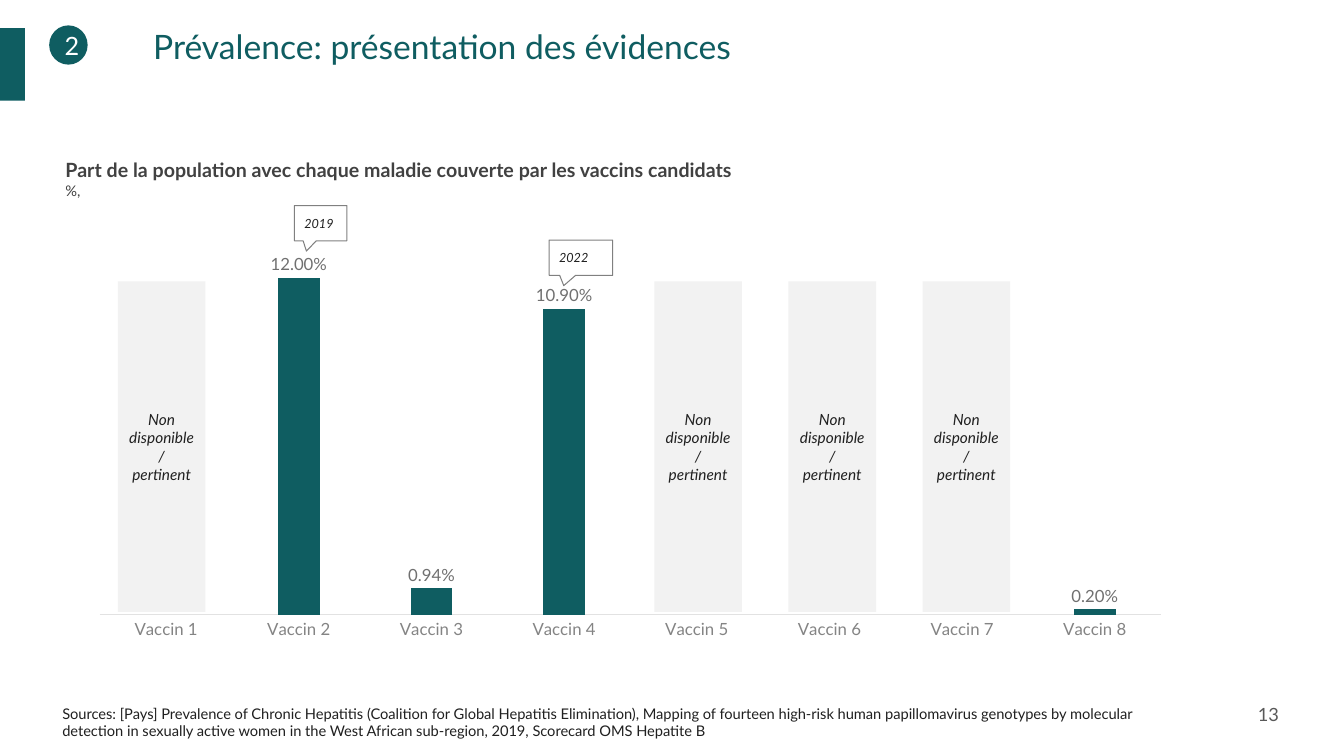
from collections import namedtuple

from lxml.etree import SubElement
from pptx import Presentation
from pptx.chart.data import CategoryChartData
from pptx.dml.color import RGBColor
from pptx.enum.chart import XL_CHART_TYPE as ChartType
from pptx.enum.chart import XL_LABEL_POSITION as LabelPosition
from pptx.enum.chart import XL_TICK_MARK as TickMark
from pptx.enum.shapes import MSO_SHAPE as Shape
from pptx.enum.text import MSO_ANCHOR as Anchor
from pptx.enum.text import MSO_AUTO_SIZE as AutoSize
from pptx.enum.text import PP_ALIGN as Align
from pptx.oxml.ns import qn
from pptx.util import Cm, Pt

TEAL = RGBColor(0x0F, 0x5D, 0x61)
WHITE = RGBColor(0xFF, 0xFF, 0xFF)
INK = RGBColor(0x20, 0x20, 0x20)
HEADING = RGBColor(0x41, 0x41, 0x41)
PAGE_GREY = RGBColor(0x59, 0x59, 0x59)
LABEL_GREY = RGBColor(0x70, 0x70, 0x70)
AXIS_GREY = RGBColor(0x84, 0x84, 0x84)
AXIS_LINE = RGBColor(0xE2, 0xE2, 0xE2)
OUTLINE = RGBColor(0x80, 0x80, 0x80)
CARD_GREY = RGBColor(0xF2, 0xF2, 0xF2)

FONT = "Lato"
Box = namedtuple("Box", "left top width height")
PREVALENCE = [None, 0.12, 0.0094, 0.109, None, None, None, 0.002]
PLOT_LAYOUT = {"x": 0.02, "y": 0.02, "w": 0.96, "h": 0.9}
SOURCES = (
    "Sources: [Pays] Prevalence of Chronic Hepatitis (Coalition for Global "
    "Hepatitis Elimination), Mapping of fourteen high-risk human papillomavirus "
    "genotypes by molecular detection in sexually active women in the West "
    "African sub-region, 2019, Scorecard OMS Hepatite B"
)


def style_font(font, size, color, bold=False, italic=False):
    """Apply the slide's typeface with a size, colour and emphasis."""
    font.name, font.size = FONT, Pt(size)
    font.color.rgb = color
    font.bold, font.italic = bold, italic


def add_run(paragraph, text, size, color, align=Align.LEFT, **emphasis):
    """Add one styled run to an aligned paragraph."""
    paragraph.alignment = align
    run = paragraph.add_run()
    run.text = text
    style_font(run.font, size, color, **emphasis)


def add_text(slide, box, anchor=Anchor.TOP):
    """Add a wrapping text box and return its frame."""
    frame = slide.shapes.add_textbox(*map(Cm, box)).text_frame
    frame.word_wrap = True
    frame.vertical_anchor = anchor
    return frame


def add_block(slide, kind, box, fill=None, line=None):
    """Add a flat preset shape with middle-anchored text."""
    block = slide.shapes.add_shape(kind, *map(Cm, box))
    block.shadow.inherit = False
    if fill is None:
        block.fill.background()
    else:
        block.fill.solid()
        block.fill.fore_color.rgb = fill
    if line is None:
        block.line.fill.background()
    else:
        block.line.color.rgb = line
        block.line.width = Pt(0.75)
    block.text_frame.vertical_anchor = Anchor.MIDDLE
    return block


def add_header(slide, box):
    """Place the title, its number badge and the edge marker."""
    add_block(slide, Shape.RECTANGLE, Box(-0.03, box.top + 0.07, 0.66, 1.83), TEAL)
    title = slide.shapes.title
    title.left, title.top, title.width, title.height = map(Cm, box)
    frame = title.text_frame
    frame.auto_size, frame.word_wrap = AutoSize.NONE, True
    frame.vertical_anchor = Anchor.TOP
    frame.margin_left = Cm(2.54)
    frame.margin_top = frame.margin_right = frame.margin_bottom = 0
    add_run(frame.paragraphs[0], "Prévalence: présentation des évidences", 24, TEAL)
    badge_box = Box(box.left - 0.08, box.top, 0.97, 0.99)
    badge = add_block(slide, Shape.OVAL, badge_box, TEAL)
    add_run(badge.text_frame.paragraphs[0], "2", 18, WHITE, Align.CENTER)


def add_chart_heading(slide, box):
    """Place the chart heading and its unit."""
    frame = add_text(slide, box)
    heading = "Part de la population avec chaque maladie couverte par les vaccins candidats"
    add_run(frame.paragraphs[0], heading, 14, HEADING, bold=True)
    add_run(frame.add_paragraph(), "%,", 10.5, HEADING)


def set_plot_layout(chart):
    """Fix the inner plot area as fractions of the chart."""
    plot_area = chart.element.xpath("c:chart/c:plotArea")[0]
    for automatic in plot_area.findall(qn("c:layout")):
        plot_area.remove(automatic)
    layout = SubElement(plot_area, qn("c:layout"))
    plot_area.insert(0, layout)
    manual = SubElement(layout, qn("c:manualLayout"))
    settings = {"layoutTarget": "inner", "xMode": "edge", "yMode": "edge", **PLOT_LAYOUT}
    for tag, value in settings.items():
        SubElement(manual, qn(f"c:{tag}")).set("val", str(value))


def add_prevalence_chart(slide, box):
    """Place the column chart of prevalence by vaccine."""
    data = CategoryChartData(number_format="0.00%")
    data.categories = [f"Vaccin {number}" for number in range(1, len(PREVALENCE) + 1)]
    data.add_series("Series 1", PREVALENCE)
    chart = slide.shapes.add_chart(ChartType.COLUMN_CLUSTERED, *map(Cm, box), data).chart
    chart.has_legend = chart.has_title = False
    style_font(chart.font, 12, HEADING)
    set_plot_layout(chart)

    vaccines = chart.category_axis
    vaccines.major_tick_mark = vaccines.minor_tick_mark = TickMark.NONE
    vaccines.format.line.color.rgb = AXIS_LINE
    vaccines.format.line.width = Pt(0.75)
    style_font(vaccines.tick_labels.font, 12, AXIS_GREY)
    shares = chart.value_axis
    shares.visible = shares.has_major_gridlines = False
    shares.minimum_scale, shares.maximum_scale = 0, 0.14
    shares.tick_labels.number_format = "0.00%"
    shares.tick_labels.number_format_is_linked = False

    columns = chart.plots[0]
    columns.vary_by_categories = False
    columns.gap_width, columns.overlap = 219, -27
    columns.series[0].format.fill.solid()
    columns.series[0].format.fill.fore_color.rgb = TEAL
    labels = columns.series[0].data_labels
    labels.show_value = True
    labels.position = LabelPosition.OUTSIDE_END
    labels.number_format, labels.number_format_is_linked = "0.00%", False
    style_font(labels.font, 12, LABEL_GREY)


def add_missing_cards(slide, box):
    """Cover each vaccine that has no value with a grey card."""
    pitch = 3.38
    for index, share in enumerate(PREVALENCE):
        if share is None:
            card_box = Box(box.left + 1.01 + index * pitch, box.top + 1.73, 2.21, 8.33)
            card = add_block(slide, Shape.RECTANGLE, card_box, CARD_GREY)
            add_run(card.text_frame.paragraphs[0], "Non disponible / pertinent",
                    11, INK, Align.CENTER, italic=True)


def add_year_callout(slide, box, year):
    """Place a callout that gives the year of a value."""
    callout = add_block(slide, Shape.RECTANGULAR_CALLOUT, box, line=OUTLINE)
    callout.adjustments[0], callout.adjustments[1] = -0.27, 0.79
    add_run(callout.text_frame.paragraphs[0], year, 9, INK, italic=True)


def add_footer(slide, box):
    """Place the sources and the page number."""
    sources_box = Box(box.left, box.top + 0.43, 28.27, 0.99)
    sources = add_text(slide, sources_box, Anchor.MIDDLE)
    add_run(sources.paragraphs[0], SOURCES, 10.5, INK)
    page_box = Box(box.left + box.width - 2.03, box.top, 2.03, box.height)
    page = add_text(slide, page_box, Anchor.MIDDLE)
    page.margin_left = page.margin_right = Cm(0.33)
    page.margin_top = page.margin_bottom = Cm(0.33)
    add_run(page.paragraphs[0], "13", 13, PAGE_GREY)


def main():
    """Build and save the prevalence slide."""
    deck = Presentation()
    deck.slide_width, deck.slide_height = Cm(33.87), Cm(19.05)
    slide = deck.slides.add_slide(deck.slide_layouts[5])
    chart_box = Box(1.96, 5.36, 27.86, 11.02)
    add_prevalence_chart(slide, chart_box)
    add_header(slide, Box(1.32, 0.64, 31.88, 2.03))
    add_chart_heading(slide, Box(1.4, 3.86, 19.71, 1.3))
    add_missing_cards(slide, chart_box)
    add_year_callout(slide, Box(7.42, 5.18, 1.32, 0.89), "2019")
    add_year_callout(slide, Box(13.84, 6.05, 1.6, 0.89), "2022")
    add_footer(slide, Box(1.32, 17.27, 32.08, 1.45))
    deck.save("out.pptx")


if __name__ == "__main__":
    main()
